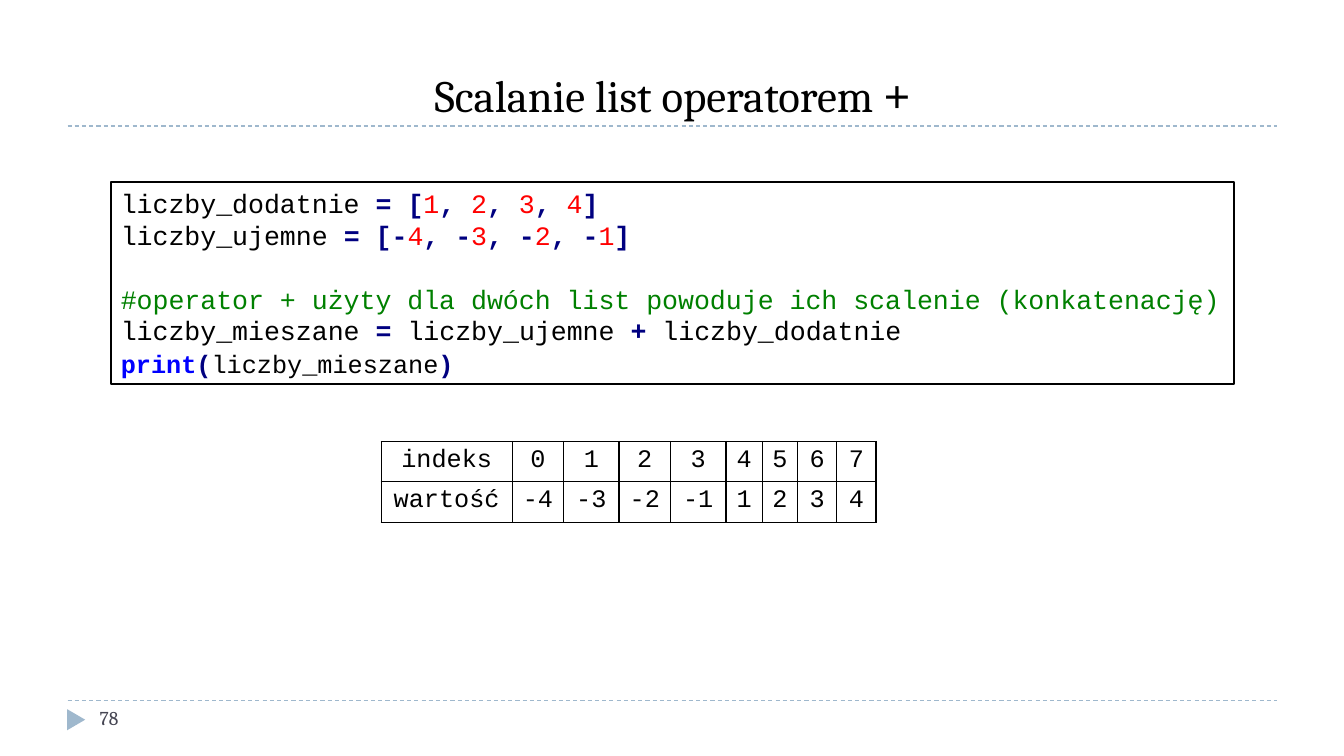
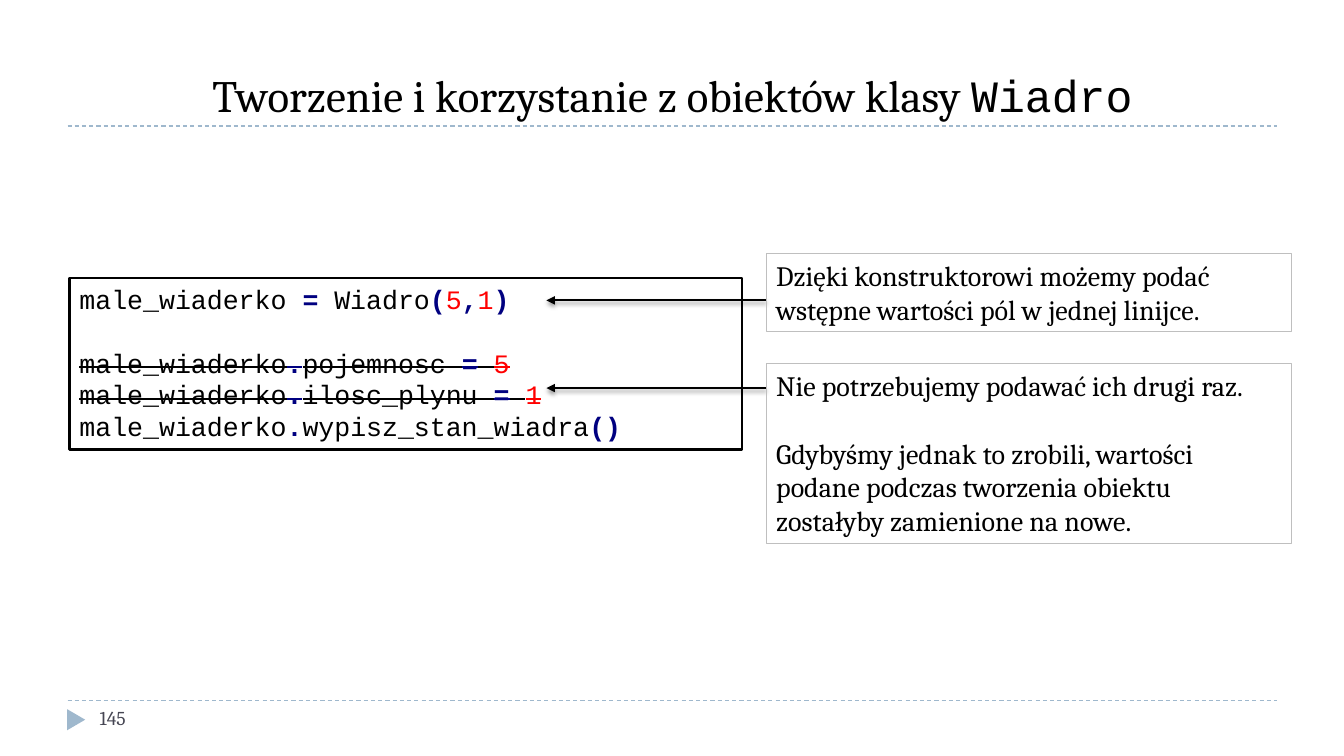
from dataclasses import dataclass
from itertools import groupby

from lxml import etree
from pptx import Presentation
from pptx.dml.color import RGBColor
from pptx.enum.dml import MSO_LINE
from pptx.enum.shapes import MSO_CONNECTOR, MSO_SHAPE
from pptx.enum.text import MSO_ANCHOR, PP_ALIGN
from pptx.oxml import parse_xml
from pptx.oxml.ns import nsdecls, qn
from pptx.util import Inches, Pt

DASH = MSO_LINE.DASH
LINE = MSO_CONNECTOR.STRAIGHT
RECT = MSO_SHAPE.RECTANGLE
WEDGE = MSO_SHAPE.ISOSCELES_TRIANGLE
TOP, BOTTOM = MSO_ANCHOR.TOP, MSO_ANCHOR.BOTTOM
LEFT, CENTER = PP_ALIGN.LEFT, PP_ALIGN.CENTER


@dataclass(frozen=True)
class Theme:
    serif: str = "Cambria"
    mono: str = "Courier New"
    ink: str = "000000"
    paper: str = "FFFFFF"
    accent: str = "9FB8CD"
    muted: str = "464653"
    frame: str = "BFBFBF"
    mark: str = "000080"
    digit: str = "FF0000"
    remark: str = "008000"
    keyword: str = "0000FF"
    title: int = 32
    note: int = 20
    code: int = 19
    cell: int = 18
    page: int = 14
    code_step: float = 22.7
    note_step: int = 24
    thin: float = 0.75
    thick: float = 1.5


THEME = Theme()
MARKS = "=[](),.+-"


def color(code):
    return RGBColor.from_string(code)


def style(para, font, size, ink=THEME.ink, align=LEFT):
    para.alignment = align
    para.font.name = font
    para.font.size = Pt(size)
    para.font.color.rgb = color(ink)


def rule(slide, start, end, ink, width):
    line = slide.shapes.add_connector(LINE, *map(Inches, start + end))
    line.line.color.rgb = color(ink)
    line.line.width = Pt(width)
    effect = etree.SubElement(line._element.spPr, qn("a:effectLst"))
    return line, effect


def arrow(slide, start, end):
    line, effect = rule(slide, start, end, THEME.ink, THEME.thick)
    etree.SubElement(line.line._get_or_add_ln(), qn("a:tailEnd"), type="triangle")
    effect.append(parse_xml(
        f'<a:outerShdw {nsdecls("a")} blurRad="{Pt(3)}" dist="{Pt(2)}" '
        f'dir="5400000" rotWithShape="0"><a:srgbClr val="{THEME.ink}">'
        '<a:alpha val="40000"/></a:srgbClr></a:outerShdw>'))


def label(slide, area, anchor=TOP):
    frame = slide.shapes.add_textbox(*map(Inches, area)).text_frame
    frame.word_wrap = True
    frame.vertical_anchor = anchor
    return frame.paragraphs[0]


def panel(slide, area, edge, width, fill=None):
    shape = slide.shapes.add_shape(RECT, *map(Inches, area))
    shape.shadow.inherit = False
    if fill:
        shape.fill.solid()
        shape.fill.fore_color.rgb = color(fill)
    else:
        shape.fill.background()
    shape.line.color.rgb = color(edge)
    shape.line.width = Pt(width)
    frame = shape.text_frame
    frame.word_wrap = True
    frame.vertical_anchor = TOP
    return frame


def write(frame, lines, step):
    paras = []
    gap = 0
    for text in lines:
        if not text:
            gap += step
            continue
        para = frame.add_paragraph() if paras else frame.paragraphs[0]
        if gap:
            para.space_before = Pt(gap)
            gap = 0
        paras.append((para, text))
    return paras


def kind(char):
    if char in MARKS:
        return THEME.mark
    return THEME.digit if char.isdigit() else THEME.ink


def tokens(text):
    if text.startswith("#"):
        return [(text, THEME.remark)]
    head = "print" if text.startswith("print") else ""
    parts = [(head, THEME.keyword)] if head else []
    rest = text[len(head):]
    return parts + [("".join(run), ink) for ink, run in groupby(rest, kind)]


def code(slide, area, lines, struck=(), small=()):
    frame = panel(slide, area, THEME.ink, THEME.thick, THEME.paper)
    for para, text in write(frame, lines, THEME.code_step):
        size = THEME.cell if text in small else THEME.code
        style(para, THEME.mono, size)
        para.line_spacing = Pt(THEME.code_step)
        for part, ink in tokens(text):
            run = para.add_run()
            run.text = part
            run.font.color.rgb = color(ink)
            run.font.bold = ink in (THEME.mark, THEME.keyword)
            if text in struck:
                run._r.get_or_add_rPr().set("strike", "sngStrike")


def note(slide, area, lines):
    frame = panel(slide, area, THEME.frame, THEME.thin)
    for para, text in write(frame, lines, THEME.note_step):
        para.text = text
        style(para, THEME.serif, THEME.note)


def border(cell):
    props = cell._tc.get_or_add_tcPr()
    for side in "LRTB":
        props.append(parse_xml(
            f'<a:ln{side} {nsdecls("a")} w="{Pt(1)}"><a:solidFill>'
            f'<a:srgbClr val="{THEME.ink}"/></a:solidFill></a:ln{side}>'))


def grid(slide, spot, widths, height, rows):
    size = sum(widths), height * len(rows)
    table = slide.shapes.add_table(
        len(rows), len(widths), *map(Inches, spot + size)).table
    table.first_row = table.horz_banding = False
    for col, width in zip(table.columns, widths):
        col.width = Inches(width)
    for row, texts in zip(table.rows, rows):
        row.height = Inches(height)
        for cell, text in zip(row.cells, texts):
            cell.text = text
            style(cell.text_frame.paragraphs[0], THEME.mono, THEME.cell, align=CENTER)
            border(cell)
            cell.fill.background()


def base(deck, title, term, page):
    slide = deck.slides.add_slide(deck.slide_layouts[6])
    for y in (6.95, 1.25):
        line, _ = rule(slide, (0.67, y), (12.67, y), THEME.accent, THEME.thin)
        line.line.dash_style = DASH
    wedge = slide.shapes.add_shape(WEDGE, *map(Inches, (0.65, 7.05, 0.21, 0.18)))
    wedge.rotation = 90
    wedge.shadow.inherit = False
    wedge.fill.solid()
    wedge.fill.fore_color.rgb = color(THEME.accent)
    wedge.line.fill.background()
    head = label(slide, (0.67, 0.17, 12, 1.08), BOTTOM)
    style(head, THEME.serif, THEME.title, align=CENTER)
    for text, font in ((title, THEME.serif), (term, THEME.mono)):
        run = head.add_run()
        run.text = text
        run.font.name = font
    foot = label(slide, (0.89, 6.95, 2.89, 0.4))
    foot.text = str(page)
    style(foot, THEME.serif, THEME.page, THEME.muted)
    return slide


def merge(deck):
    slide = base(deck, "Scalanie list operatorem ", "+", 78)
    last = "print(liczby_mieszane)"
    code(slide, (1.1, 1.81, 11.14, 2), [
        "liczby_dodatnie = [1, 2, 3, 4]",
        "liczby_ujemne = [-4, -3, -2, -1]",
        "",
        "#operator + użyty dla dwóch list powoduje ich scalenie (konkatenację)",
        "liczby_mieszane = liczby_ujemne + liczby_dodatnie",
        last,
    ], small=(last,))
    values = [-4, -3, -2, -1, 1, 2, 3, 4]
    widths = [1.3, 0.51, 0.55, 0.51, 0.55, 0.36, 0.35, 0.39, 0.39]
    grid(slide, (3.78, 4.38), widths, 0.4, [
        ["indeks", *map(str, range(len(values)))],
        ["wartość", *map(str, values)],
    ])


def bucket(deck):
    slide = base(deck, "Tworzenie i korzystanie z obiektów klasy ", "Wiadro", 145)
    struck = ["male_wiaderko.pojemnosc = 5", "male_wiaderko.ilosc_plynu = 1"]
    code(slide, (0.69, 2.76, 6.67, 1.7), [
        "male_wiaderko = Wiadro(5,1)",
        "",
        *struck,
        "male_wiaderko.wypisz_stan_wiadra()",
    ], struck=struck)
    left, width = 7.6, 5.21
    for y in (3.85, 2.98):
        arrow(slide, (left, y), (5.42, y))
    note(slide, (left, 2.52, width, 0.77), [
        "Dzięki konstruktorowi możemy podać wstępne wartości pól w jednej linijce.",
    ])
    note(slide, (left, 3.61, width, 1.78), [
        "Nie potrzebujemy podawać ich drugi raz.",
        "",
        "Gdybyśmy jednak to zrobili, wartości podane podczas tworzenia obiektu "
        "zostałyby zamienione na nowe.",
    ])


def main():
    deck = Presentation()
    deck.slide_width = Inches(13.33)
    deck.slide_height = Inches(7.5)
    merge(deck)
    bucket(deck)
    deck.save("out.pptx")


if __name__ == "__main__":
    main()
